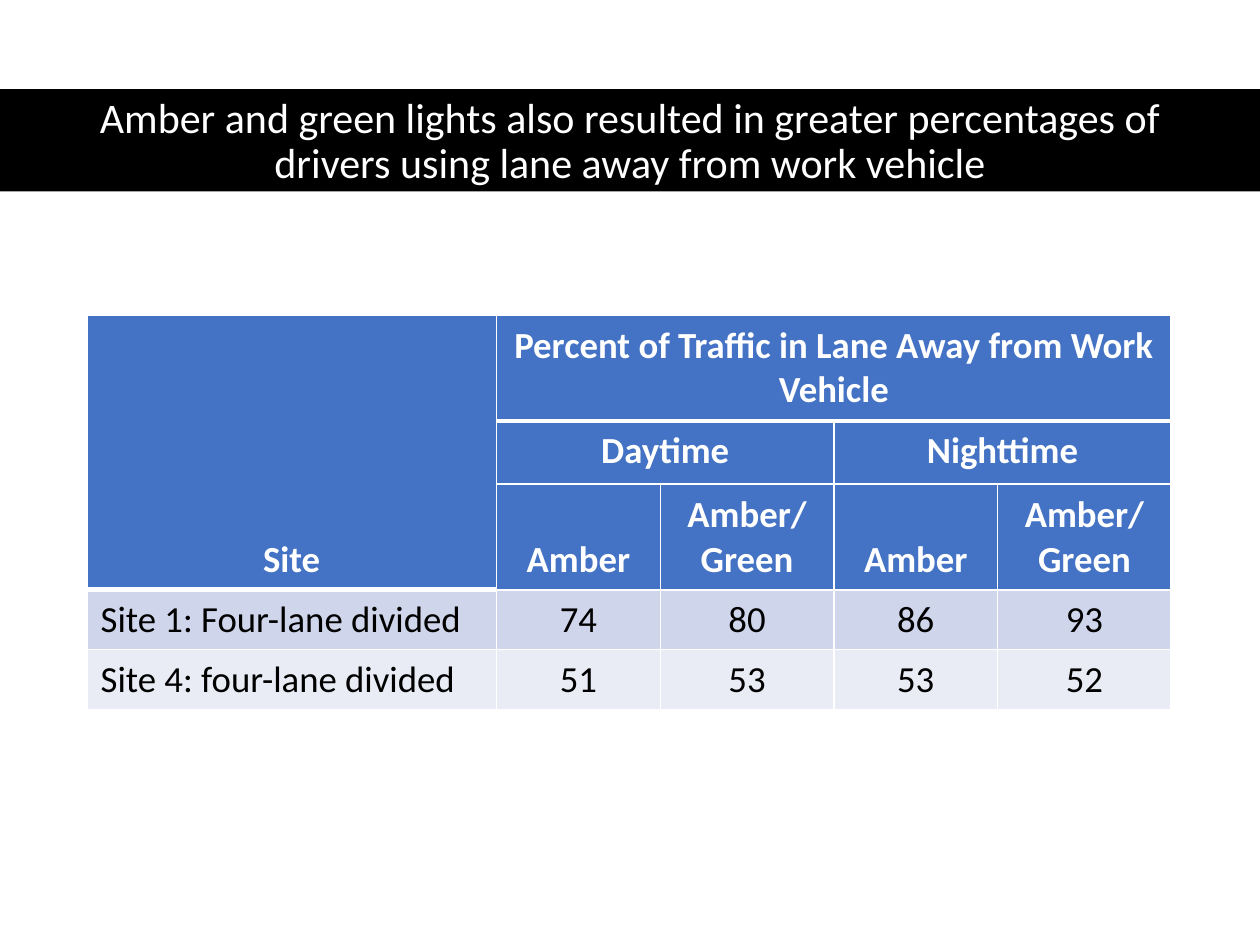
from lxml import etree
from pptx import Presentation
from pptx.dml.color import RGBColor as Rgb
from pptx.enum.shapes import MSO_SHAPE as Shape
from pptx.enum.text import MSO_ANCHOR as Anchor, PP_ALIGN as Align
from pptx.oxml.ns import qn
from pptx.util import Cm, Pt

HUES = {"bar": "000000", "ink": "000000", "white": "FFFFFF",
        "head": "4472C4", "odd": "CFD5EA", "even": "E9EBF5"}
HEADS = 3
WIDTHS = [8.26, 3.3, 3.5, 3.3, 3.5]
HEIGHTS = [2.13, 1.27, 2.13, 1.19, 1.19]
MERGES = [(0, 0, 2, 0), (0, 1, 0, 4), (1, 1, 1, 2), (1, 3, 1, 4)]
ROWS = [
    ["Site", "Percent of Traffic in Lane Away from Work Vehicle", "", "", ""],
    ["", "Daytime", "", "Nighttime", ""],
    ["", "Amber", "Amber/ Green", "Amber", "Amber/ Green"],
    ["Site 1: Four-lane divided", "74", "80", "86", "93"],
    ["Site 4: four-lane divided", "51", "53", "53", "52"],
]


def hue(name):
    return Rgb.from_string(HUES[name])


def paint(fill, name):
    fill.solid()
    fill.fore_color.rgb = hue(name)


def write(frame, text, size=21, color="ink", bold=False,
          align=Align.CENTER, space=None):
    para = frame.paragraphs[0]
    para.alignment = align
    para.line_spacing = space
    run = para.add_run()
    run.text = text
    font = run.font
    font.name, font.size, font.bold = "Calibri", Pt(size), bold
    font.color.rgb = hue(color)


def edge(cell, **widths):
    """Draw white cell borders; widths in points by side, 1 by default."""
    props = cell._tc.get_or_add_tcPr()
    for side in "LRTB":
        line = etree.SubElement(props, qn(f"a:ln{side}"),
                                w=str(Pt(widths.get(side, 1))))
        fill = etree.SubElement(line, qn("a:solidFill"))
        etree.SubElement(fill, qn("a:srgbClr"), val=HUES["white"])


def banner(slide, left, top, width, height):
    bar = slide.shapes.add_shape(Shape.RECTANGLE, Cm(left), Cm(top),
                                 Cm(width), Cm(height))
    bar.shadow.inherit = False
    paint(bar.fill, "bar")
    bar.line.fill.background()
    title = slide.shapes.title
    title._element.addprevious(bar._element)
    title.left, title.top = Cm(left + 1.75), Cm(top + 0.08)
    title.width, title.height = Cm(width - 3.5), Cm(height - 0.08)
    title.text_frame.vertical_anchor = Anchor.MIDDLE
    write(title.text_frame,
          "Amber and green lights also resulted in greater percentages of "
          "drivers using lane away from work vehicle",
          size=24, color="white", space=0.9)


def style(cell, text, row, col):
    head = row < HEADS
    cell.margin_left = cell.margin_right = Cm(0.28)
    cell.margin_top = cell.margin_bottom = Cm(0.15)
    last = HEADS - 1 if col == 0 else 0
    thick = {"B": 3} if row == last or (head and col == 0) else {}
    if row == last + 1 and (col or not head):
        thick["T"] = 3
    edge(cell, **thick)
    paint(cell.fill, "head" if head else "odd" if row % 2 else "even")
    low = row >= HEADS - 1 and col > 0 or (head and col == 0)
    cell.vertical_anchor = Anchor.BOTTOM if low else Anchor.TOP
    if text:
        write(cell.text_frame, text, color="white" if head else "ink",
              bold=head,
              align=Align.CENTER if head or col else Align.LEFT)


def results(slide, left, top):
    table = slide.shapes.add_table(
        len(HEIGHTS), len(WIDTHS), Cm(left), Cm(top),
        Cm(sum(WIDTHS)), Cm(sum(HEIGHTS))).table
    for col, width in zip(table.columns, WIDTHS):
        col.width = Cm(width)
    for row, height in zip(table.rows, HEIGHTS):
        row.height = Cm(height)
    for r1, c1, r2, c2 in MERGES:
        table.cell(r1, c1).merge(table.cell(r2, c2))
    for row, texts in enumerate(ROWS):
        for col, text in enumerate(texts):
            style(table.cell(row, col), text, row, col)


def main():
    deck = Presentation()
    deck.slide_width, deck.slide_height = Cm(25.4), Cm(19.05)
    slide = deck.slides.add_slide(deck.slide_layouts[5])
    banner(slide, 0, 1.8, 25.4, 2.06)
    results(slide, 1.75, 6.36)
    deck.save("out.pptx")


if __name__ == "__main__":
    main()
